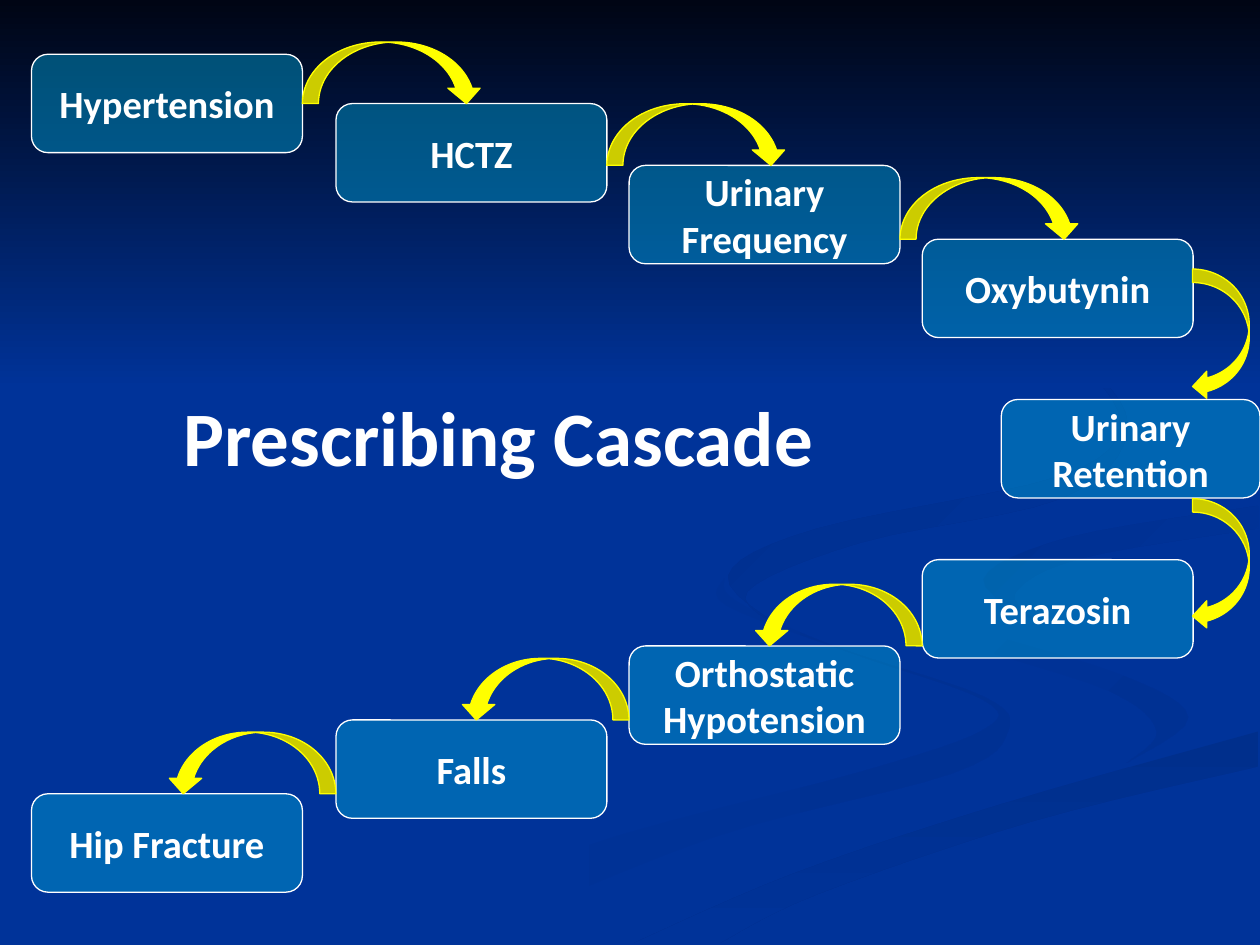
from dataclasses import dataclass
from itertools import pairwise

import lxml.etree
import pptx
import pptx.dml.color
import pptx.enum.shapes
import pptx.enum.text
import pptx.oxml.ns
import pptx.util

Pt = pptx.util.Pt
Kind = pptx.enum.shapes.MSO_SHAPE
Point = tuple[float, float]


@dataclass(frozen=True)
class Theme:
    background: str = "003399"
    night: str = "000514"
    box: str = "0099CC"
    arrow: str = "FFFF00"
    text: str = "FFFFFF"
    font: str = "Calibri"
    title_size: float = 44
    box_size: float = 22
    line_width: float = 0.75
    box_opacity: int = 49


@dataclass(frozen=True)
class Ribbon:
    """A band between two smooth edges that run the same way."""
    edges: tuple[list[Point], list[Point]]
    start: str
    end: str
    angle: int  # clockwise degrees


@dataclass(frozen=True)
class Step:
    label: str
    left: float
    top: float
    width: float = 154.8
    height: float = 56.2


THEME = Theme()
BASE = THEME.background

# Background ribbons, back to front
RIBBONS = [
    Ribbon(([(414, 330), (420, 343), (476, 369), (562, 398), (576, 418), (544, 442),
             (406, 479), (260, 539)],
            [(414, 330), (415, 346), (489, 374), (562, 400), (562, 417), (492, 441),
             (330, 485), (216, 539)]), BASE, "003193", 0),
    Ribbon(([(521, 334), (536, 353), (639, 385), (679, 410), (644, 436)],
            [(521, 334), (544, 364), (634, 395), (661, 418), (644, 436)]),
           BASE, "003193", 45),
    Ribbon(([(362, 539), (454, 499), (574, 459), (719, 418)],
            [(411, 539), (467, 511), (591, 469), (719, 438)]), "002F8C", BASE, 90),
    Ribbon(([(595, 357), (562, 331), (611, 307), (719, 289)],
            [(595, 357), (580, 339), (618, 319), (719, 302)]), "003091", BASE, 45),
    Ribbon(([(549, 168), (622, 210), (644, 248), (606, 285), (492, 310), (427, 338), (448, 360)],
            [(549, 168), (609, 201), (640, 241), (606, 272), (467, 302), (416, 329), (448, 360)]),
           "002F8E", BASE, 45),
]

# The cascade: down to the right, round the edge, back to the left
LANES = [18, 192, 359.5, 527]
DESCENT = [Step(label, left, top) for label, left, top in zip(
    ["Hypertension", "HCTZ", "Urinary Frequency", "Oxybutynin"],
    LANES, [31, 59.2, 94.5, 136.7])]
TURN = Step("Urinary Retention", 572.2, 228.3, width=147.8)
RETURN = [Step(label, left, top) for label, left, top in zip(
    ["Terazosin", "Orthostatic Hypotension", "Falls", "Hip Fracture"],
    reversed(LANES), [319.8, 369.1, 411.4, 453.6])]
ARROW_HEIGHT = 35.2


def rgb(code: str) -> pptx.dml.color.RGBColor:
    return pptx.dml.color.RGBColor.from_string(code)


def smooth(knots: list[Point], pieces: int = 6) -> list[Point]:
    """Catmull-Rom curve through the knots."""
    padded = [knots[0], *knots, knots[-1]]
    curve = [knots[0]]
    for a, b, c, d in zip(padded, padded[1:], padded[2:], padded[3:]):
        for piece in range(1, pieces + 1):
            t = piece / pieces
            curve.append(tuple(
                q + t * (r - p + t * (2 * p - 5 * q + 4 * r - s
                                      + t * (3 * q - p - 3 * r + s))) / 2
                for p, q, r, s in zip(a, b, c, d)))
    return curve


def fill_gradient(shape, start: str, end: str, angle: int) -> None:
    shape.shadow.inherit = False
    shape.line.fill.background()
    shape.fill.gradient()
    shape.fill.gradient_angle = -angle % 360
    for stop, color in zip(shape.fill.gradient_stops, (start, end)):
        stop.color.rgb = rgb(color)


def paint(shape, fill: str, line: str) -> None:
    shape.shadow.inherit = False
    shape.fill.solid()
    shape.fill.fore_color.rgb = rgb(fill)
    shape.line.color.rgb = rgb(line)
    shape.line.width = Pt(THEME.line_width)


def set_opacity(shape, percent: int) -> None:
    color = shape.element.spPr.find(".//" + pptx.oxml.ns.qn("a:srgbClr"))
    alpha = lxml.etree.SubElement(color, pptx.oxml.ns.qn("a:alpha"))
    alpha.set("val", str(percent * 1000))


def write(shape, text: str, size: float) -> None:
    frame = shape.text_frame
    frame.word_wrap = True
    frame.vertical_anchor = pptx.enum.text.MSO_ANCHOR.MIDDLE
    para = frame.paragraphs[0]
    para.text = text
    para.alignment = pptx.enum.text.PP_ALIGN.CENTER
    para.font.name = THEME.font
    para.font.size = Pt(size)
    para.font.bold = True
    para.font.color.rgb = rgb(THEME.text)


def draw_ribbon(page, ribbon: Ribbon) -> None:
    there, back = (smooth(edge) for edge in ribbon.edges)
    corners = [(Pt(x), Pt(y)) for x, y in there + back[::-1]]
    builder = page.shapes.build_freeform(*corners[0])
    builder.add_line_segments(corners[1:], close=True)
    fill_gradient(builder.convert_to_shape(), ribbon.start, ribbon.end, ribbon.angle)


def draw_step(page, step: Step) -> None:
    box = page.shapes.add_shape(Kind.ROUNDED_RECTANGLE, Pt(step.left), Pt(step.top),
                                Pt(step.width), Pt(step.height))
    paint(box, THEME.box, THEME.text)
    set_opacity(box, THEME.box_opacity)
    write(box, step.label, THEME.box_size)


def draw_arrow(page, left: float, top: float, width: float, height: float,
               bend: float = 0.262, flip: bool = False, rotation: float = 0) -> None:
    arrow = page.shapes.add_shape(Kind.CURVED_DOWN_ARROW, Pt(left), Pt(top),
                                  Pt(width), Pt(height))
    paint(arrow, THEME.arrow, THEME.arrow)
    for index, value in enumerate((bend, 2 * bend, 0.25)):
        arrow.adjustments[index] = value
    arrow.rotation = rotation
    if flip:
        arrow.element.spPr.xfrm.set("flipH", "1")


def main() -> None:
    deck = pptx.Presentation()
    deck.slide_width, deck.slide_height = Pt(720), Pt(540)
    page = deck.slides.add_slide(deck.slide_layouts[6])

    # Background
    page.background.fill.solid()
    page.background.fill.fore_color.rgb = rgb(THEME.background)
    for ribbon in RIBBONS:
        draw_ribbon(page, ribbon)
    sky = page.shapes.add_shape(Kind.RECTANGLE, Pt(0), Pt(0), Pt(720), Pt(222))
    fill_gradient(sky, THEME.night, BASE, 90)

    # Boxes
    for step in [TURN, *DESCENT, *RETURN]:
        draw_step(page, step)

    # Arrows end on top of the next box
    for step, following in pairwise(DESCENT):
        draw_arrow(page, step.left + step.width, following.top - ARROW_HEIGHT,
                   103, ARROW_HEIGHT)
    for step, following in pairwise(RETURN):
        draw_arrow(page, step.left - 96.5, following.top - ARROW_HEIGHT,
                   96.5, ARROW_HEIGHT, flip=True)
    for top in (175, 306.2):
        draw_arrow(page, 660.2, top, 74.9, 32.4, bend=0.239, rotation=90)

    # Title
    title = page.shapes.add_textbox(Pt(12), Pt(204), Pt(546), Pt(90))
    write(title, "Prescribing Cascade", THEME.title_size)

    deck.save("out.pptx")


if __name__ == "__main__":
    main()
